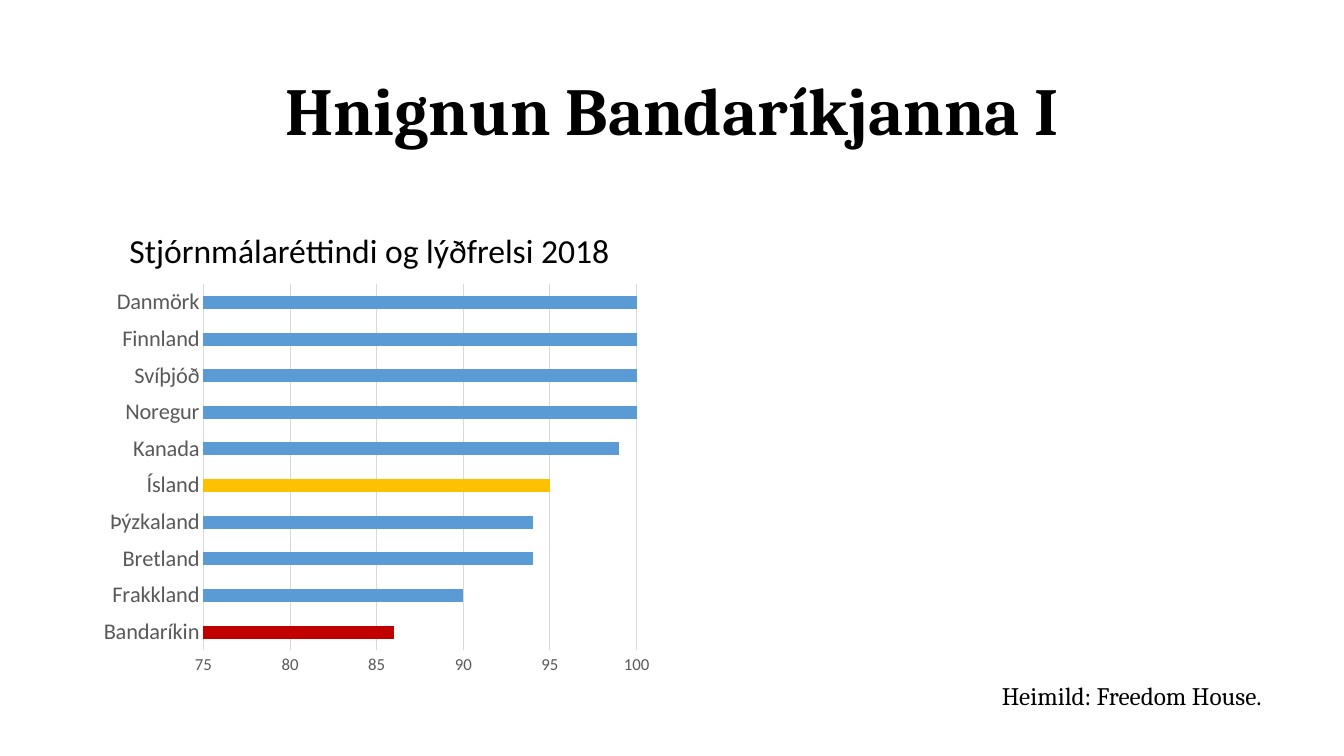
from pptx import Presentation
from pptx.chart.data import CategoryChartData
from pptx.dml.color import RGBColor
from pptx.enum.chart import XL_CHART_TYPE, XL_TICK_MARK
from pptx.enum.text import MSO_ANCHOR, MSO_AUTO_SIZE, PP_ALIGN
from pptx.util import Pt

BLACK = RGBColor(0x00, 0x00, 0x00)
GREY = RGBColor(0x59, 0x59, 0x59)
PALE = RGBColor(0xD9, 0xD9, 0xD9)
BLUE = RGBColor(0x5B, 0x9B, 0xD5)
RED = RGBColor(0xC0, 0x00, 0x00)
GOLD = RGBColor(0xFF, 0xC0, 0x00)

SCORES = {
    "Bandaríkin": 86,
    "Frakkland": 90,
    "Bretland": 94,
    "Þýzkaland": 94,
    "Ísland": 95,
    "Kanada": 99,
    "Noregur": 100,
    "Svíþjóð": 100,
    "Finnland": 100,
    "Danmörk": 100,
}
MARKED = {"Bandaríkin": RED, "Ísland": GOLD}


def style(font, size, color=BLACK, face="Calibri", bold=False):
    font.size, font.name, font.bold = Pt(size), face, bold
    font.color.rgb = color


def write(frame, text, align=PP_ALIGN.LEFT, anchor=MSO_ANCHOR.TOP,
          wrap=True, fit=MSO_AUTO_SIZE.NONE, line=1.0, before=0, **font):
    frame.word_wrap, frame.auto_size = wrap, fit
    frame.vertical_anchor = anchor
    para = frame.paragraphs[0]
    para.alignment, para.line_spacing = align, line
    para.space_before = Pt(before)
    run = para.add_run()
    run.text = text
    style(run.font, **font)


class Deck:
    """Holds the slide and the shared look of its elements."""

    serif = "Cambria"

    def __init__(self, wide, high):
        self.prs = Presentation()
        self.prs.slide_width, self.prs.slide_height = Pt(wide), Pt(high)
        self.slide = self.prs.slides.add_slide(self.prs.slide_layouts[4])

    def holder(self, index, box, text, **form):
        shape = self.slide.placeholders[index]
        shape.left, shape.top, shape.width, shape.height = map(Pt, box)
        write(shape.text_frame, text, align=PP_ALIGN.CENTER, line=0.9, **form)

    def label(self, box, text, **form):
        shape = self.slide.shapes.add_textbox(*map(Pt, box))
        write(shape.text_frame, text, wrap=False,
              fit=MSO_AUTO_SIZE.SHAPE_TO_FIT_TEXT, **form)

    def bars(self, box, scores, marked):
        data = CategoryChartData()
        data.categories = list(scores)
        data.add_series("Series 1", list(scores.values()))
        chart = self.slide.shapes.add_chart(
            XL_CHART_TYPE.BAR_CLUSTERED, *map(Pt, box), data).chart
        chart.has_title = chart.has_legend = False
        style(chart.font, 10)

        for axis, size in ((chart.category_axis, 16), (chart.value_axis, 12)):
            axis.major_tick_mark = axis.minor_tick_mark = XL_TICK_MARK.NONE
            style(axis.tick_labels.font, size, GREY)
        names, values = chart.category_axis, chart.value_axis
        names.has_major_gridlines = False
        values.minimum_scale, values.maximum_scale = 75, 100
        values.major_unit = 5
        values.has_major_gridlines = True
        for line in (names.format.line, values.major_gridlines.format.line):
            line.color.rgb, line.width = PALE, Pt(0.75)
        values.format.line.fill.background()

        plot = chart.plots[0]
        plot.gap_width, plot.vary_by_categories = 182, False
        series = plot.series[0]
        series.format.fill.solid()
        series.format.fill.fore_color.rgb = BLUE
        for spot, name in enumerate(scores):
            if name in marked:
                fill = series.points[spot].format.fill
                fill.solid()
                fill.fore_color.rgb = marked[name]

    def save(self):
        for shape in list(self.slide.placeholders):
            if not shape.text_frame.text:
                shape.element.getparent().remove(shape.element)
        self.prs.save("out.pptx")


def main():
    deck = Deck(960, 540)
    deck.holder(0, (66, 28.75, 828, 104.4), "Hnignun Bandaríkjanna I",
                anchor=MSO_ANCHOR.MIDDLE, size=48, face=deck.serif, bold=True)
    deck.holder(1, (56.2, 132.5, 415.4, 64.8),
                "Stjórnmálaréttindi og lýðfrelsi 2018",
                anchor=MSO_ANCHOR.BOTTOM, before=10, size=24)
    deck.bars((66, 197.25, 406, 290.2), SCORES, MARKED)
    deck.label((708.5, 482.4, 213, 29), "Heimild: Freedom House.",
               size=18, face=deck.serif)
    deck.save()


if __name__ == "__main__":
    main()
